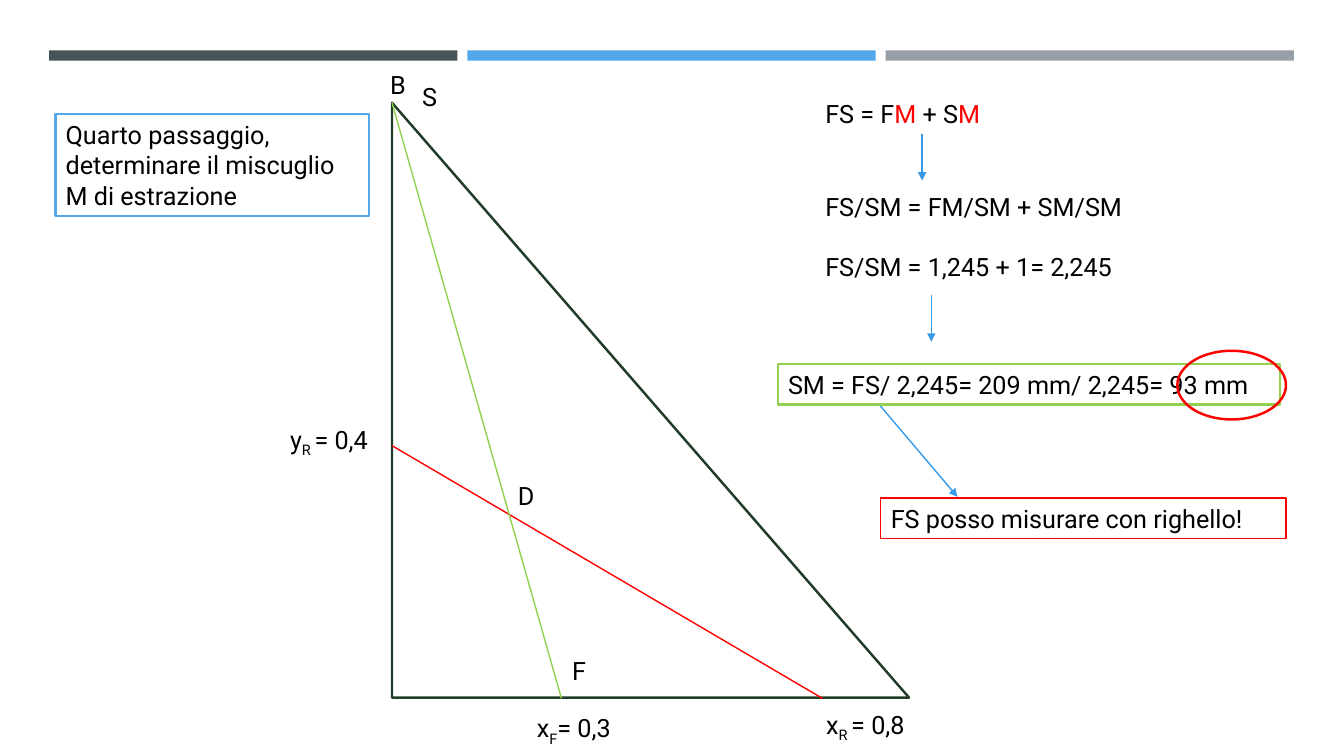
from dataclasses import dataclass

from lxml import etree
from pptx import Presentation
from pptx.dml.color import RGBColor
from pptx.enum.shapes import MSO_CONNECTOR, MSO_SHAPE
from pptx.enum.text import MSO_ANCHOR, MSO_AUTO_SIZE, PP_ALIGN
from pptx.oxml.ns import qn
from pptx.util import Cm, Pt

RECT = MSO_SHAPE.RECTANGLE
OVAL = MSO_SHAPE.OVAL
WEDGE = MSO_SHAPE.RIGHT_TRIANGLE
STRAIGHT = MSO_CONNECTOR.STRAIGHT
LEFT = PP_ALIGN.LEFT
MIDDLE = MSO_ANCHOR.MIDDLE
FIXED = MSO_AUTO_SIZE.NONE

BLACK = RGBColor(0x00, 0x00, 0x00)
WHITE = RGBColor(0xFF, 0xFF, 0xFF)
RED = RGBColor(0xFF, 0x00, 0x00)
LIME = RGBColor(0x92, 0xD0, 0x50)
PINE = RGBColor(0x22, 0x3C, 0x27)
SKY = RGBColor(0x53, 0xA8, 0xEB)
BLUE = RGBColor(0x37, 0x9A, 0xE8)
SLATE = RGBColor(0x46, 0x53, 0x59)
GREY = RGBColor(0x96, 0x9F, 0xA7)

FONT = "Roboto"
SIZE = Pt(18)
ROW = 1.02  # height of a one-line box


@dataclass
class Box:
    kind: int
    x: float
    y: float
    w: float
    h: float
    line: RGBColor | None = None
    pt: float = 1.75
    fill: RGBColor | None = None
    text: str = ""


@dataclass
class Label:
    """Text whose every second part, split at |, is marked: red or lowered."""
    text: str
    x: float
    y: float
    w: float
    red: bool = False


@dataclass
class Line:
    x1: float
    y1: float
    x2: float
    y2: float
    color: RGBColor
    arrow: bool = False


BAR_X, BAR_STEP, BAR_W = 1.24, 10.54, 10.29
BARS = [Box(RECT, BAR_X + i * BAR_STEP, 1.27, BAR_W, 0.26, fill=color)
        for i, color in enumerate((SLATE, SKY, GREY))]

# Corners of the diagram
AXIS, TOP, BASE = 9.88, 2.59, 17.6
GRAPH = Box(WEDGE, AXIS, TOP, 13.03, 14.99, PINE)

LINES = [
    Line(AXIS, 11.23, 20.73, BASE, RED),
    Line(AXIS, TOP, 14.15, BASE, LIME),
    Line(23.24, 3.38, 23.24, 4.55, BLUE, True),
    Line(23.47, 7.44, 23.47, 8.61, BLUE, True),
    Line(22.17, 10.21, 24.13, 12.52, BLUE, True),
]

LABELS = [
    Label("x|R |= 0,8", 20.57, 17.75, 2.67),
    Label("y|R |= 0,4", 7.06, 10.57, 2.72),
    Label("x|F|= 0,3", 13.28, 17.83, 2.54),
    Label("B", 9.58, 1.63, 0.94),
    Label("D", 12.8, 11.99, 0.97),
    Label("F", 14.17, 16.38, 0.86),
    Label("S", 10.39, 1.93, 0.94),
    Label("FS = F|M| + S|M", 20.55, 2.36, 4.75, True),
]

NOTES = [
    Box(RECT, 19.61, 9.17, 12.65, ROW, LIME, 1.75, WHITE,
        "SM = FS/ 2,245= 209 mm/ 2,245= 93 mm"),
    Box(RECT, 22.2, 12.55, 10.21, ROW, RED, 0.75, None,
        "FS posso misurare con righello!"),
    Box(OVAL, 29.67, 8.84, 2.74, 1.73, RED),
]


def style(frame) -> None:
    for para in frame.paragraphs:
        para.alignment = LEFT
        for run in para.runs:
            run.font.name = FONT
            run.font.size = SIZE
            run.font.color.rgb = BLACK


def paint(shape, box: Box) -> None:
    if box.fill is None:
        shape.fill.background()
    else:
        shape.fill.solid()
        shape.fill.fore_color.rgb = box.fill
    if box.line is None:
        shape.line.fill.background()
    else:
        shape.line.color.rgb = box.line
        shape.line.width = Pt(box.pt)


def place(shape, box: Box) -> None:
    shape.left, shape.top = Cm(box.x), Cm(box.y)
    shape.width, shape.height = Cm(box.w), Cm(box.h)


def draw_box(slide, box: Box) -> None:
    shape = slide.shapes.add_shape(
        box.kind, Cm(box.x), Cm(box.y), Cm(box.w), Cm(box.h))
    shape.shadow.inherit = False
    paint(shape, box)
    if box.text:
        shape.text_frame.text = box.text
        style(shape.text_frame)


def draw_line(slide, line: Line) -> None:
    link = slide.shapes.add_connector(
        STRAIGHT, Cm(line.x1), Cm(line.y1), Cm(line.x2), Cm(line.y2))
    link.line.color.rgb = line.color
    link.line.width = Pt(1)
    props = link._element.spPr
    if line.arrow:
        etree.SubElement(props.find(qn("a:ln")), qn("a:tailEnd"),
                         type="triangle")
    etree.SubElement(props, qn("a:effectLst"))


def draw_label(slide, label: Label) -> None:
    frame = slide.shapes.add_textbox(
        Cm(label.x), Cm(label.y), Cm(label.w), Cm(ROW)).text_frame
    frame.word_wrap = False
    para = frame.paragraphs[0]
    for part in label.text.split("|"):
        para.add_run().text = part
    style(frame)
    for run in para.runs[1::2]:
        if label.red:
            run.font.color.rgb = RED
        else:
            run._r.get_or_add_rPr().set("baseline", "-25000")


def draw_title(slide) -> None:
    box = Box(RECT, 1.4, 2.87, 7.9, 2.57, SKY, 1.75, WHITE)
    title = slide.shapes.title
    place(title, box)
    paint(title, box)
    frame = title.text_frame
    frame.text = ("Quarto passaggio,\ndeterminare il miscuglio\n"
                  "M di estrazione")
    frame.word_wrap = True
    frame.auto_size = FIXED
    frame.vertical_anchor = MIDDLE
    style(frame)


def draw_steps(slide) -> None:
    frame = slide.shapes.add_textbox(
        Cm(20.55), Cm(4.7), Cm(8.38), Cm(2.57)).text_frame
    frame.word_wrap = False
    frame.text = "FS/SM = FM/SM + SM/SM\nFS/SM = 1,245 + 1= 2,245"
    frame.paragraphs[1].space_before = Pt(21)
    style(frame)


def main() -> None:
    deck = Presentation()
    deck.slide_width, deck.slide_height = Cm(33.87), Cm(19.05)
    slide = deck.slides.add_slide(deck.slide_layouts[5])
    draw_title(slide)
    for box in BARS + [GRAPH]:
        draw_box(slide, box)
    for line in LINES:
        draw_line(slide, line)
    for label in LABELS:
        draw_label(slide, label)
    draw_steps(slide)
    for note in NOTES:
        draw_box(slide, note)
    deck.save("out.pptx")


if __name__ == "__main__":
    main()
